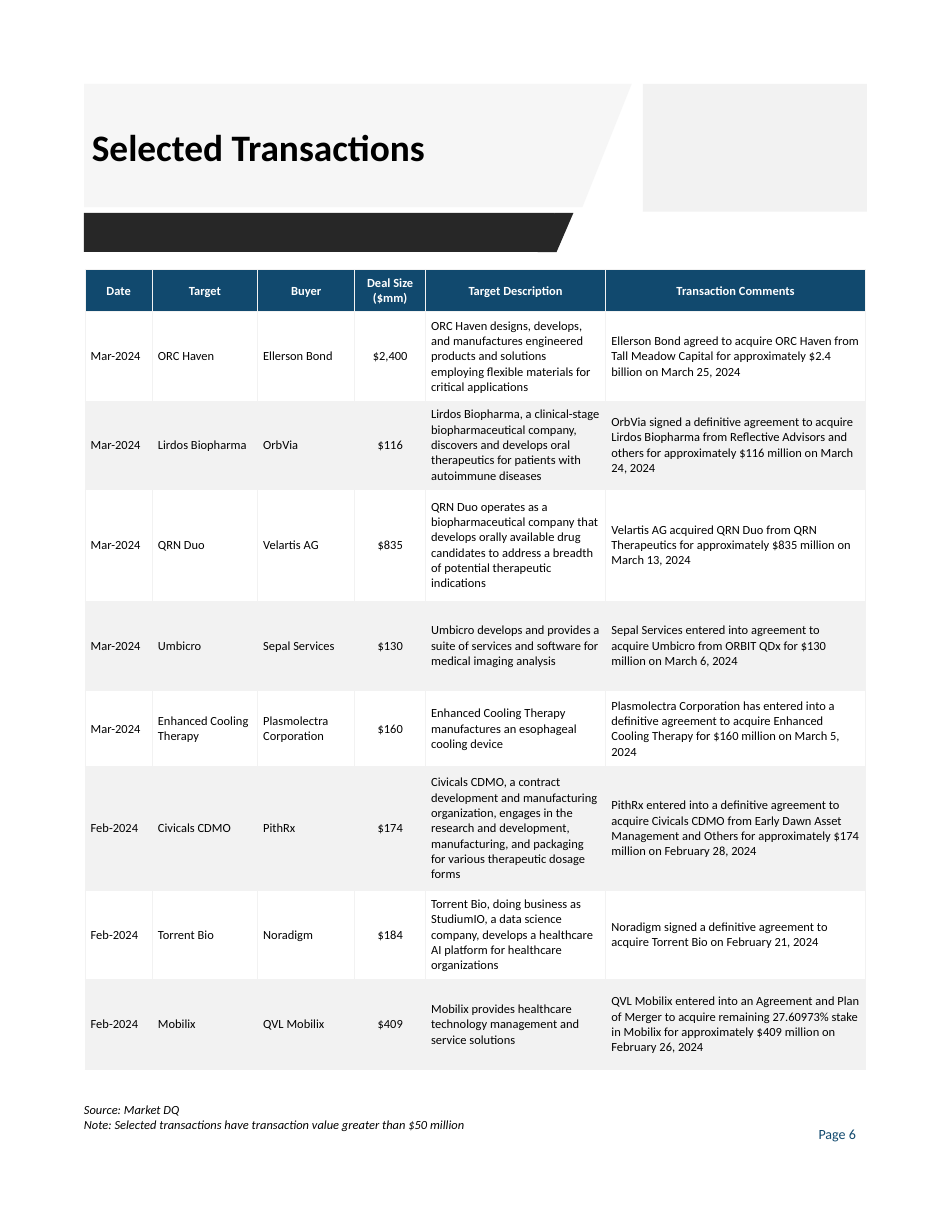
"""Build the Selected Transactions page: banner, deal table and footnotes."""
from lxml import etree
from pptx import Presentation
from pptx.dml.color import RGBColor
from pptx.enum.shapes import MSO_SHAPE
from pptx.enum.text import MSO_ANCHOR, MSO_AUTO_SIZE, PP_ALIGN
from pptx.oxml import parse_xml
from pptx.oxml.ns import nsdecls, qn
from pptx.util import Inches, Pt

RECTANGLE, PARALLELOGRAM = MSO_SHAPE.RECTANGLE, MSO_SHAPE.PARALLELOGRAM
LEFT, CENTER, RIGHT = PP_ALIGN.LEFT, PP_ALIGN.CENTER, PP_ALIGN.RIGHT
MIDDLE, TOP, BOTTOM = MSO_ANCHOR.MIDDLE, MSO_ANCHOR.TOP, MSO_ANCHOR.BOTTOM
BLACK = RGBColor(0x00, 0x00, 0x00)
WHITE = RGBColor(0xFF, 0xFF, 0xFF)
CHARCOAL = RGBColor(0x27, 0x27, 0x27)
NAVY = RGBColor(0x11, 0x49, 0x6E)
PALE = RGBColor(0xF2, 0xF2, 0xF2)
FONT = "Calibri"

TITLE = "Selected Transactions"
PAGE_LABEL = "Page 6"
NOTES = [
    "Source: Market DQ",
    "Note: Selected transactions have transaction value greater than $50 million",
]
HEADERS = ["Date", "Target", "Buyer", "Deal Size\n($mm)", "Target Description", "Transaction Comments"]
DEALS = [
    ("Mar-2024", "ORC Haven", "Ellerson Bond", "$2,400",
     "ORC Haven designs, develops, and manufactures engineered products and solutions "
     "employing flexible materials for critical applications",
     "Ellerson Bond agreed to acquire ORC Haven from Tall Meadow Capital for approximately "
     "$2.4 billion on March 25, 2024"),
    ("Mar-2024", "Lirdos Biopharma", "OrbVia", "$116",
     "Lirdos Biopharma, a clinical-stage biopharmaceutical company, discovers and develops "
     "oral therapeutics for patients with autoimmune diseases",
     "OrbVia signed a definitive agreement to acquire Lirdos Biopharma from Reflective Advisors "
     "and others for approximately $116 million on March 24, 2024"),
    ("Mar-2024", "QRN Duo", "Velartis AG", "$835",
     "QRN Duo operates as a biopharmaceutical company that develops orally available drug "
     "candidates to address a breadth of potential therapeutic indications",
     "Velartis AG acquired QRN Duo from QRN Therapeutics for approximately $835 million on "
     "March 13, 2024"),
    ("Mar-2024", "Umbicro", "Sepal Services", "$130",
     "Umbicro develops and provides a suite of services and software for medical imaging analysis",
     "Sepal Services entered into agreement to acquire Umbicro from ORBIT QDx for $130 million "
     "on March 6, 2024"),
    ("Mar-2024", "Enhanced Cooling Therapy", "Plasmolectra Corporation", "$160",
     "Enhanced Cooling Therapy manufactures an esophageal cooling device",
     "Plasmolectra Corporation has entered into a definitive agreement to acquire Enhanced "
     "Cooling Therapy for $160 million on March 5, 2024"),
    ("Feb-2024", "Civicals CDMO", "PithRx", "$174",
     "Civicals CDMO, a contract development and manufacturing organization, engages in the "
     "research and development, manufacturing, and packaging for various therapeutic dosage forms",
     "PithRx entered into a definitive agreement to acquire Civicals CDMO from Early Dawn Asset "
     "Management and Others for approximately $174 million on February 28, 2024"),
    ("Feb-2024", "Torrent Bio", "Noradigm", "$184",
     "Torrent Bio, doing business as StudiumIO, a data science company, develops a healthcare "
     "AI platform for healthcare organizations",
     "Noradigm signed a definitive agreement to acquire Torrent Bio on February 21, 2024"),
    ("Feb-2024", "Mobilix", "QVL Mobilix", "$409",
     "Mobilix provides healthcare technology management and service solutions",
     "QVL Mobilix entered into an Agreement and Plan of Merger to acquire remaining 27.60973% "
     "stake in Mobilix for approximately $409 million on February 26, 2024"),
]
COLUMN_WIDTHS = [0.6, 0.94, 0.87, 0.63, 1.61, 2.32]
ROW_HEIGHTS = [0.37, 0.8, 0.68, 1, 0.8, 0.68, 1.1, 0.8, 0.8]
AMOUNT_COLUMN = 3
BANNER_OUTLINE = [(0.75, 0.75), (5.64, 0.75), (5.2, 1.85), (0.75, 1.85)]
BANNER_BLOCKS = [
    (RECTANGLE, (5.74, 0.75, 2, 1.14), PALE),
    (PARALLELOGRAM, (4.8, 1.9, 0.32, 0.35), CHARCOAL),
    (RECTANGLE, (0.75, 1.9, 4.2, 0.35), CHARCOAL),
]


def paint(shape, color):
    shape.shadow.inherit = False
    shape.fill.solid()
    shape.fill.fore_color.rgb = color
    shape.line.fill.background()


def write(frame, text, size, color, alignment=LEFT, bold=False, italic=False):
    frame.word_wrap = True
    frame.text = text
    for paragraph in frame.paragraphs:
        paragraph.alignment = alignment
        font = paragraph.font
        font.name, font.size, font.bold, font.italic = FONT, Pt(size), bold, italic
        font.color.rgb = color


def add_banner(slide):
    points = [(Inches(x), Inches(y)) for x, y in BANNER_OUTLINE]
    builder = slide.shapes.build_freeform(*points[0])
    builder.add_line_segments(points[1:], close=True)
    banner = builder.convert_to_shape()
    paint(banner, PALE)
    color = banner.element.spPr.find(qn("a:solidFill"))[0]
    etree.SubElement(color, qn("a:alpha"), val="65000")
    for kind, box, fill in BANNER_BLOCKS:
        block = slide.shapes.add_shape(kind, *map(Inches, box))
        paint(block, fill)
        if kind == PARALLELOGRAM:
            block.adjustments[0] = 0.47


def place_title(slide):
    title = slide.shapes.title
    title.left, title.top, title.width, title.height = map(Inches, (0.72, 1.06, 5.5, 0.5))
    write(title.text_frame, TITLE, 24, BLACK, bold=True)
    title.text_frame.auto_size = MSO_AUTO_SIZE.NONE
    title.text_frame.vertical_anchor = TOP
    title.element.getparent().append(title.element)


def add_borders(cell):
    properties = cell._tc.get_or_add_tcPr()
    for side in ("lnL", "lnR", "lnT", "lnB"):
        properties.append(parse_xml(
            f'<a:{side} {nsdecls("a")} w="{Pt(0.75)}"><a:solidFill>'
            f'<a:srgbClr val="{PALE}"/></a:solidFill></a:{side}>'))


def add_deal_table(slide):
    rows = [HEADERS, *DEALS]
    frame = slide.shapes.add_table(
        len(rows), len(HEADERS), Inches(0.76), Inches(2.41),
        Inches(sum(COLUMN_WIDTHS)), Inches(sum(ROW_HEIGHTS)))
    table = frame.table
    table.horz_banding = False
    for column, width in zip(table.columns, COLUMN_WIDTHS):
        column.width = Inches(width)
    for row_index, (row, height, texts) in enumerate(zip(table.rows, ROW_HEIGHTS, rows)):
        row.height = Inches(height)
        header = row_index == 0
        for column_index, (cell, text) in enumerate(zip(row.cells, texts)):
            centered = header or column_index == AMOUNT_COLUMN
            write(cell.text_frame, text, 8, WHITE if header else BLACK,
                  CENTER if centered else LEFT, bold=header)
            cell.vertical_anchor = MIDDLE
            cell.margin_left = cell.margin_top = cell.margin_bottom = Inches(0.05)
            cell.margin_right = Inches(0.05 if header or column_index else 0.03)
            add_borders(cell)
            if row_index % 2 and not header:
                cell.fill.background()
            else:
                cell.fill.solid()
                cell.fill.fore_color.rgb = NAVY if header else PALE


def add_footer(slide):
    page = slide.shapes.add_textbox(*map(Inches, (5.83, 9.99, 1.91, 0.26))).text_frame
    write(page, PAGE_LABEL, 9, NAVY, RIGHT)
    page.vertical_anchor = BOTTOM
    notes = slide.shapes.add_textbox(*map(Inches, (0.7, 9.83, 6.56, 0.29))).text_frame
    write(notes, "\n".join(NOTES), 8, BLACK, italic=True)
    notes.margin_left = notes.margin_right = Inches(0.05)
    notes.margin_top = notes.margin_bottom = Inches(0.01)


def main():
    presentation = Presentation()
    presentation.slide_width, presentation.slide_height = Inches(8.5), Inches(11)
    slide = presentation.slides.add_slide(presentation.slide_layouts[5])
    add_banner(slide)
    place_title(slide)
    add_deal_table(slide)
    add_footer(slide)
    presentation.save("out.pptx")


if __name__ == "__main__":
    main()
